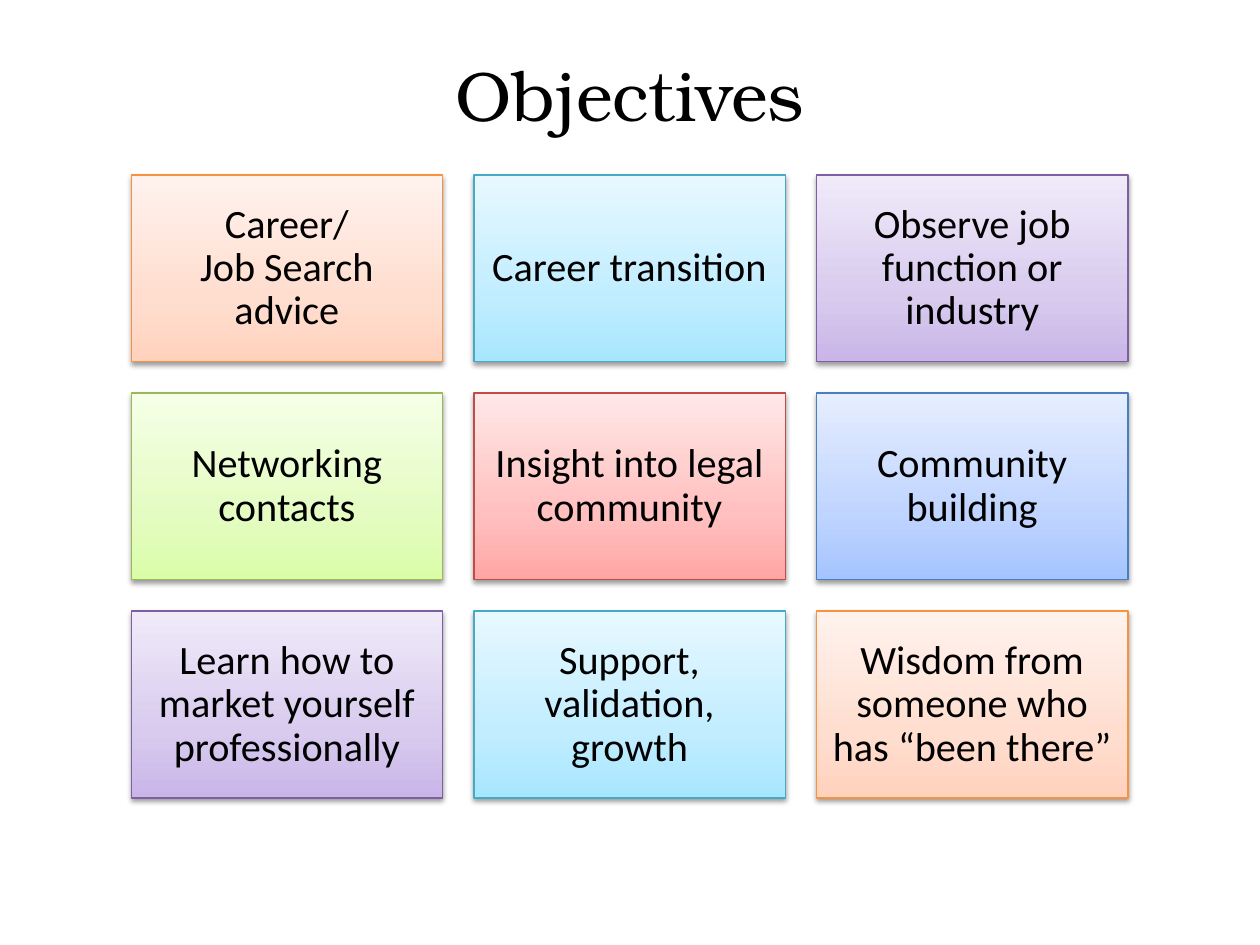
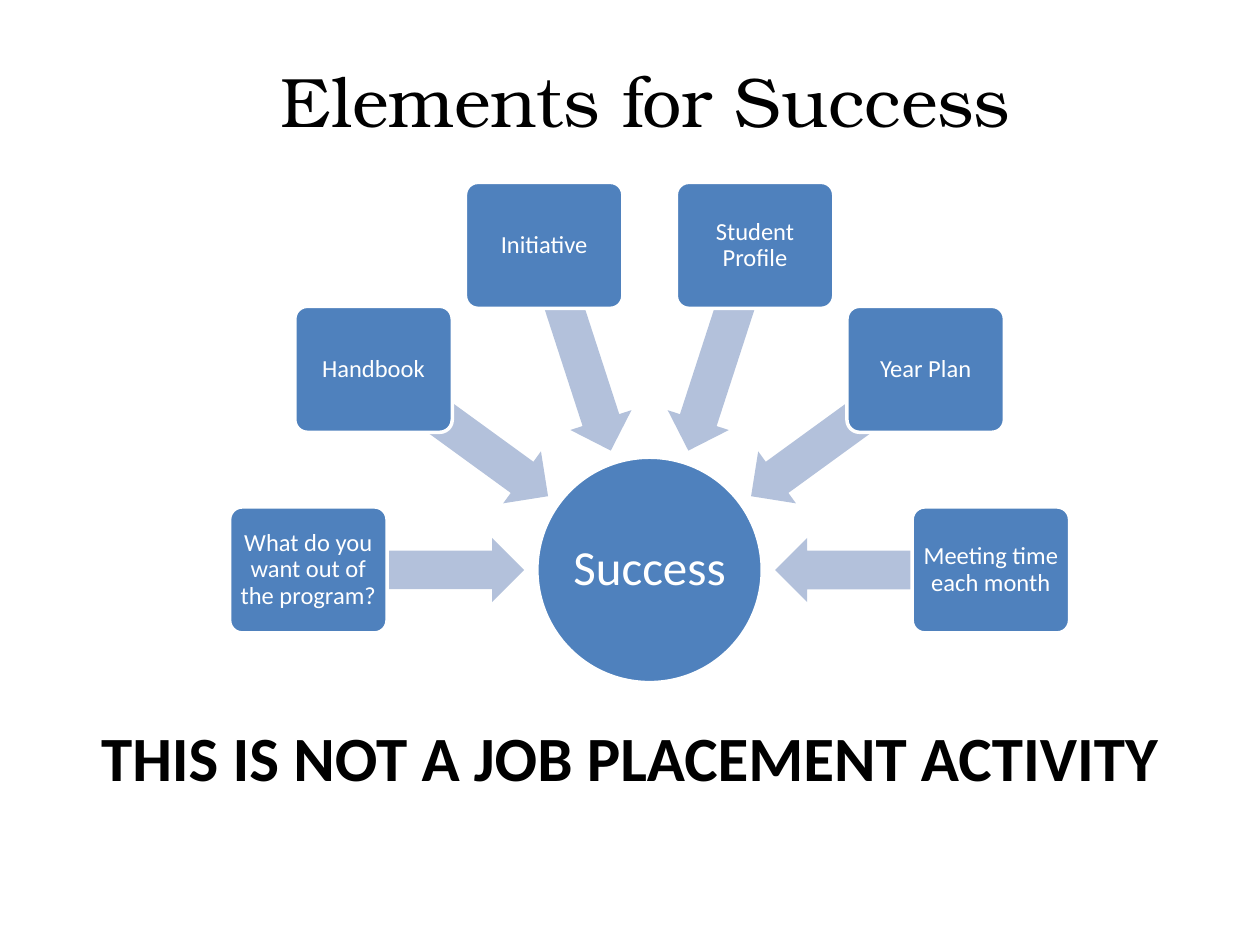
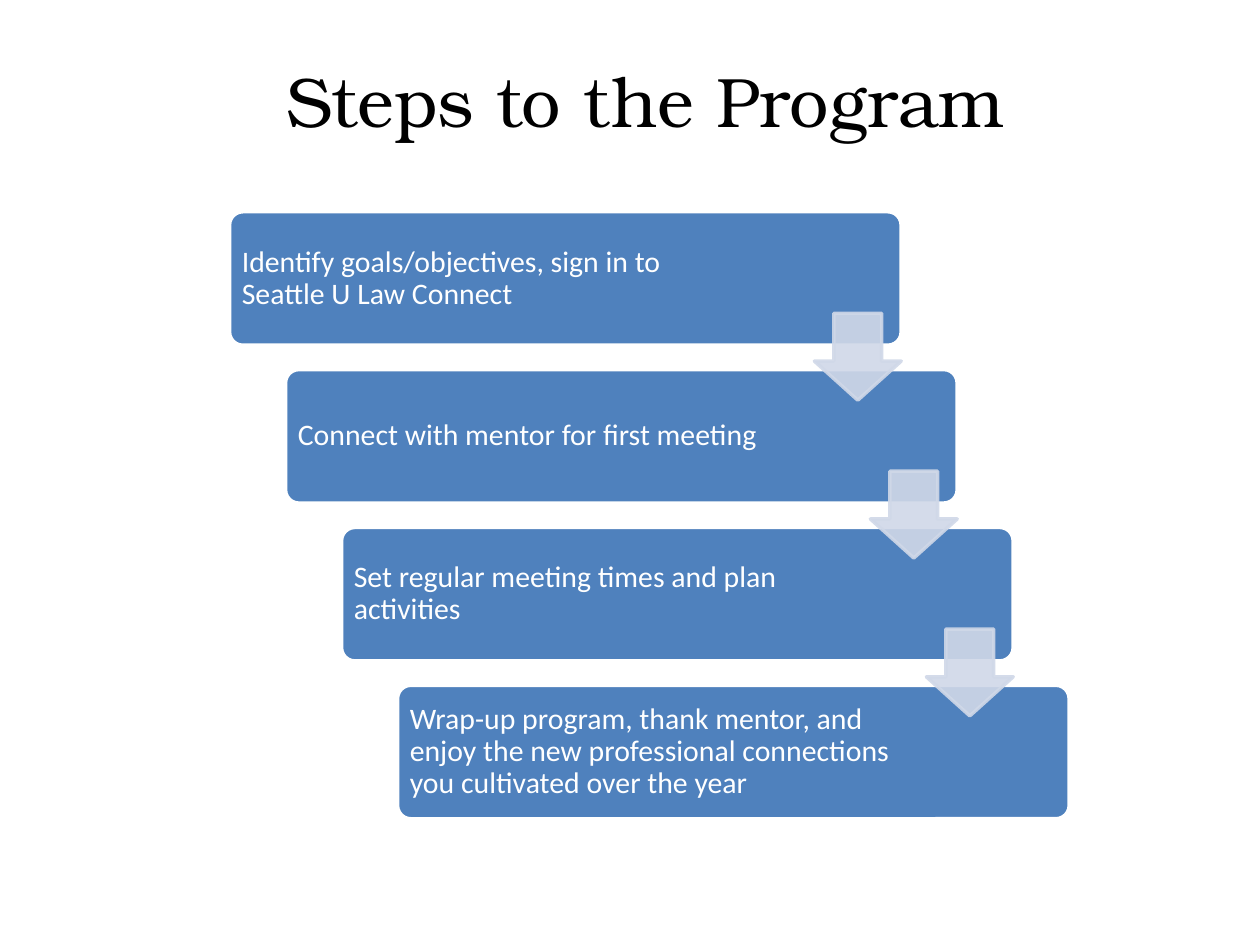
from math import cos, sin, radians
from pptx import Presentation
from pptx.dml.color import RGBColor
from pptx.enum.shapes import MSO_SHAPE as Kind
from pptx.enum.text import MSO_ANCHOR as Anchor, PP_ALIGN as Align
from pptx.oxml import parse_xml
from pptx.util import Pt

NS = 'xmlns:a="http://schemas.openxmlformats.org/drawingml/2006/main"'
HEAD, BODY = "TeX Gyre Bonum", "Calibri"
HUE = {"ink": "000000", "white": "FFFFFF", "blue": "4F81BD",
       "arrow": "B3C1DB", "pale": "D0D8E8"}

# line colour, then gradient stops from bottom to top
TINT = {
    "orange": ("F69240", "FFD2BD", "FFDED0", "FFF2ED"),
    "aqua": ("46AAC5", "A7E6FF", "C1EDFF", "E7F8FF"),
    "purple": ("7D60A0", "C9B5E8", "D8CBEE", "F0EAF9"),
    "green": ("98B955", "DAFDA7", "E4FCC2", "F5FFE7"),
    "red": ("BF4C48", "FFA6A5", "FFC0BF", "FFE7E7"),
    "blue": ("4B7EBC", "A4C4FF", "BFD4FF", "E6EEFF"),
}

GOALS = [
    ("Career/\vJob Search advice", "orange"),
    ("Career transition", "aqua"),
    ("Observe job function or industry", "purple"),
    ("Networking contacts", "green"),
    ("Insight into legal community", "red"),
    ("Community building", "blue"),
    ("Learn how to market yourself professionally", "purple"),
    ("Support, validation, growth", "aqua"),
    ("Wisdom from someone who has “been there”", "orange"),
]
PARTS = ["What do you want out of the program?", "Handbook", "Initiative",
         "Student Profile", "Year Plan", "Meeting time each month"]
STEPS = [
    "Identify goals/objectives, sign in to Seattle U Law Connect",
    "Connect with mentor for first meeting",
    "Set regular meeting times and plan activities",
    "Wrap-up program, thank mentor, and enjoy the new professional "
    "connections you cultivated over the year",
]


def rgb(hue):
    return RGBColor.from_string(hue)


def write(shape, text, size, hue="ink", font=BODY, bold=False, pad=None,
          right=None, align=Align.CENTER, anchor=Anchor.MIDDLE, lead=0.9):
    """Set a shape's text; pad is the inset on all sides, right overrides one."""
    frame = shape.text_frame
    frame.text = text
    frame.word_wrap = True
    frame.vertical_anchor = anchor
    if pad is not None:
        frame.margin_left = frame.margin_top = frame.margin_bottom = Pt(pad)
        frame.margin_right = Pt(pad if right is None else right)
    para = frame.paragraphs[0]
    para.alignment = align
    para.line_spacing = lead
    for run in para.runs:
        run.font.name, run.font.size, run.font.bold = font, Pt(size), bold
        run.font.color.rgb = rgb(HUE[hue])


def label(slide, box, text, size, **style):
    shape = slide.shapes.add_textbox(*map(Pt, box))
    write(shape, text, size, lead=1.0, **style)


def block(slide, kind, box, fill, line=None, adj=()):
    """Add a flat shape with an optional 2 pt outline."""
    shape = slide.shapes.add_shape(kind, *map(Pt, box))
    shape.shadow.inherit = False
    shape.fill.solid()
    shape.fill.fore_color.rgb = rgb(HUE[fill])
    if line:
        shape.line.color.rgb = rgb(HUE[line])
        shape.line.width = Pt(2)
    else:
        shape.line.fill.background()
    for i, value in enumerate(adj):
        shape.adjustments[i] = value
    return shape


def card(slide, box, tint):
    """Add a rectangle with a vertical gradient and a soft shadow."""
    edge, *stops = TINT[tint]
    shape = slide.shapes.add_shape(Kind.RECTANGLE, *map(Pt, box))
    marks = "".join(
        f'<a:gs pos="{pos}"><a:srgbClr val="{hue}"/></a:gs>'
        for pos, hue in zip((0, 35000, 100000), stops))
    props = shape._element.spPr
    props.append(parse_xml(
        f'<a:gradFill {NS} rotWithShape="1"><a:gsLst>{marks}</a:gsLst>'
        '<a:lin ang="16200000" scaled="0"/></a:gradFill>'))
    shape.line.color.rgb = rgb(edge)
    shape.line.width = Pt(0.75)
    shape.shadow.inherit = False
    props.find("{*}effectLst").append(parse_xml(
        f'<a:outerShdw {NS} blurRad="{Pt(3.1)}" dist="{Pt(1.6)}" '
        'dir="5400000" rotWithShape="0"><a:srgbClr val="000000">'
        '<a:alpha val="38000"/></a:srgbClr></a:outerShdw>'))
    return shape


def fade(shape, share):
    """Make the fill and line of a shape partly clear."""
    for hue in shape._element.spPr.iter("{*}srgbClr"):
        hue.append(parse_xml(f'<a:alpha {NS} val="{share * 1000}"/>'))


def page(deck, title, box=(48, 18, 642, 78)):
    slide = deck.slides.add_slide(deck.slide_layouts[6])
    label(slide, box, title, 40, font=HEAD)
    return slide


def goals(deck):
    slide = page(deck, "Objectives", (36, 8.6, 648, 90))
    wide, high, gap = 178, 106.8, 17.8
    for i, (text, tint) in enumerate(GOALS):
        row, col = divmod(i, 3)
        box = (75 + col * (wide + gap), 100 + row * (high + gap), wide, high)
        write(card(slide, box, tint), text, 23, pad=7)


def parts(deck):
    slide = page(deck, "Elements for Success")
    mid_x, mid_y = 371.2, 325.7

    def spot(angle, reach, wide, high):
        """Box whose centre lies at an angle and distance from the hub."""
        turn = radians(angle)
        return (mid_x + reach * cos(turn) - wide / 2,
                mid_y + reach * sin(turn) - high / 2, wide, high)

    hub = block(slide, Kind.OVAL, spot(0, 0, 128.8, 128.8), "blue", "white")
    write(hub, "Success", 28, "white", pad=1.4)
    for i, text in enumerate(PARTS):
        angle = 180 + i * 180 / (len(PARTS) - 1)
        arrow = block(slide, Kind.LEFT_ARROW, spot(angle, 133.2, 123, 36.7),
                      "arrow", adj=(0.6, 0.5))
        arrow.rotation = angle % 360
        node = block(slide, Kind.ROUNDED_RECTANGLE, spot(angle, 195, 90, 72),
                     "blue", "white", (0.1,))
        write(node, text, 14, "white", pad=2.1)
    label(slide, (0, 406.8, 720, 51), "THIS IS NOT A JOB PLACEMENT ACTIVITY",
          36, bold=True, anchor=Anchor.TOP)


def steps(deck):
    slide = page(deck, "Steps to the Program")
    left, top, wide, high = 131.2, 121, 383.8, 76.3
    over, down, size = 32, 90.2, 49.6
    for i, text in enumerate(STEPS):
        bar = block(slide, Kind.ROUNDED_RECTANGLE,
                    (left + i * over, top + i * down, wide, high),
                    "blue", "white", (0.1,))
        write(bar, text, 17, "white", pad=4.8, right=86, align=Align.LEFT)
    for i in range(len(STEPS) - 1):
        arrow = block(slide, Kind.DOWN_ARROW,
                      (left + wide - size + i * over, 179.1 + i * down,
                       size, size), "pale", "pale")
        arrow.adjustments[0], arrow.adjustments[1] = 0.55, 0.45
        fade(arrow, 90)


def main():
    deck = Presentation()
    deck.slide_width, deck.slide_height = Pt(720), Pt(540)
    for build in (goals, parts, steps):
        build(deck)
    deck.save("out.pptx")


if __name__ == "__main__":
    main()
